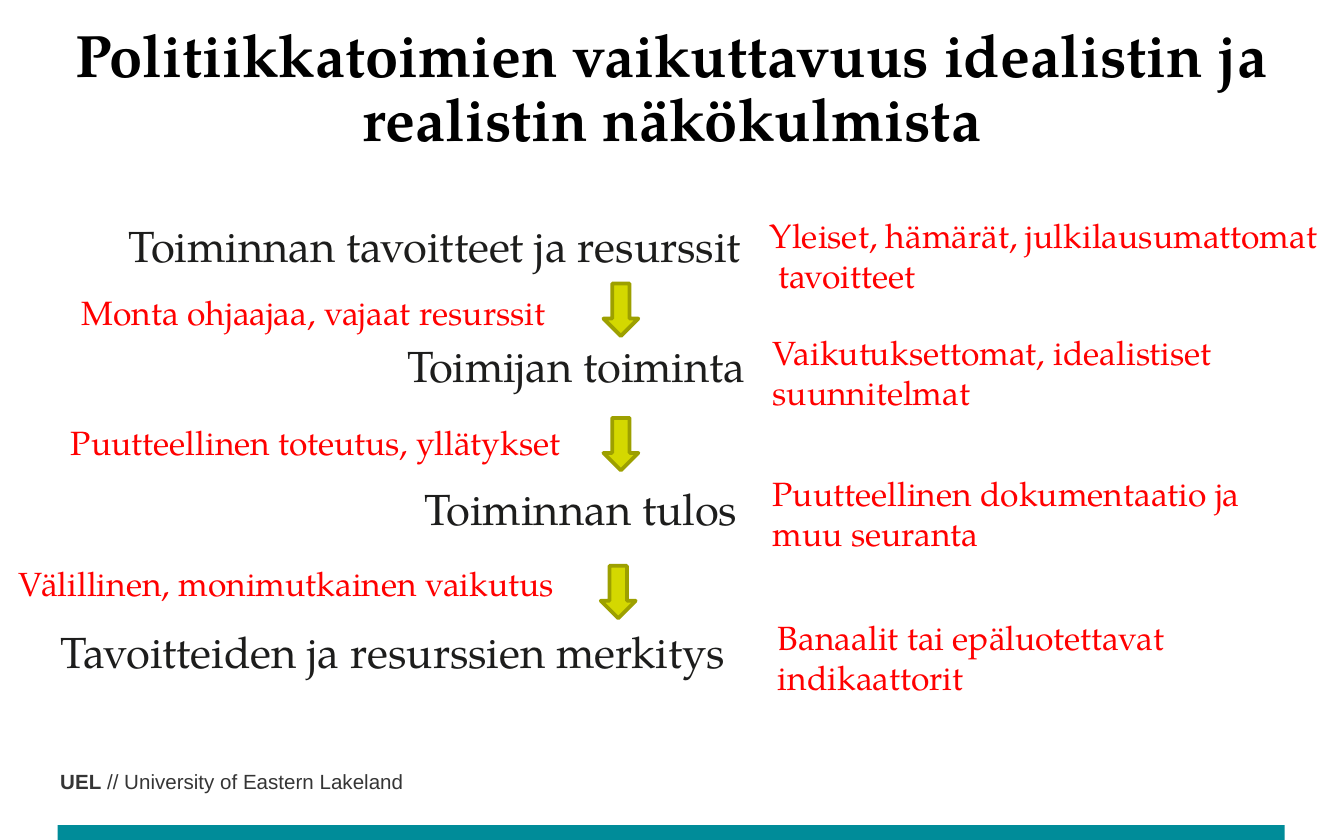
import pptx
import pptx.util
import pptx.dml.color
import pptx.enum.shapes
import pptx.enum.text
from dataclasses import dataclass

Inches = pptx.util.Inches
Pt = pptx.util.Pt


@dataclass(frozen=True)
class Theme:
    serif: str = "TeX Gyre Pagella"
    sans: str = "Arial"
    black: str = "000000"
    ink: str = "1D1D1C"
    grey: str = "353535"
    red: str = "FF0000"
    teal: str = "008C99"
    lime: str = "D4D800"
    olive: str = "9DA000"
    title_size: float = 32
    step_size: float = 23.3
    remark_size: float = 18
    footer_size: float = 11


theme = Theme()


def add_run(p, text, font, size, color, bold=False):
    r = p.add_run()
    r.text = text
    r.font.name = font
    r.font.size = Pt(size)
    r.font.bold = bold
    r.font.color.rgb = pptx.dml.color.RGBColor.from_string(color)


def add_text(left, top, width, height, lines, size, color):
    """Add an unwrapped text box with one paragraph per line."""
    sp = s.shapes.add_textbox(Inches(left), Inches(top), Inches(width), Inches(height))
    tf = sp.text_frame
    tf.word_wrap = False
    for i, line in enumerate(lines):
        p = tf.add_paragraph() if i else tf.paragraphs[0]
        add_run(p, line, theme.serif, size, color)


prs = pptx.Presentation()
prs.slide_width = Inches(10)
prs.slide_height = Inches(6.25)
s = prs.slides.add_slide(prs.slide_layouts[5])

# Footer
sp = s.shapes.add_textbox(Inches(0.35), Inches(5.67), Inches(3.86), Inches(0.29))
sp.text_frame.word_wrap = True
p = sp.text_frame.paragraphs[0]
add_run(p, "UEL", theme.sans, theme.footer_size, theme.grey, bold=True)
add_run(p, " // University of Eastern Lakeland", theme.sans, theme.footer_size, theme.grey)

bar = s.shapes.add_shape(pptx.enum.shapes.MSO_SHAPE.RECTANGLE,
                         Inches(0.43), Inches(6.14), Inches(9.13), Inches(0.11))
bar.shadow.inherit = False
bar.fill.solid()
bar.fill.fore_color.rgb = pptx.dml.color.RGBColor.from_string(theme.teal)
bar.line.fill.background()

# Title
title = s.shapes.title
title.left, title.top = Inches(0), Inches(0.14)
title.width, title.height = Inches(10), Inches(1.07)
tf = title.text_frame
tf.auto_size = pptx.enum.text.MSO_AUTO_SIZE.NONE
tf.vertical_anchor = pptx.enum.text.MSO_ANCHOR.TOP
p = tf.paragraphs[0]
p.alignment = pptx.enum.text.PP_ALIGN.CENTER
p.line_spacing = 0.9
add_run(p, "Politiikkatoimien vaikuttavuus idealistin ja realistin näkökulmista",
        theme.serif, theme.title_size, theme.black, bold=True)

# The idealist's chain of steps
steps = [
    (0.86, 1.58, 4.85, "Toiminnan tavoitteet ja resurssit"),
    (2.93, 2.47, 2.78, "Toimijan toiminta"),
    (3.06, 3.54, 2.57, "Toiminnan tulos"),
    (0.35, 4.6, 5.24, "Tavoitteiden ja resurssien merkitys"),
]
for left, top, width, text in steps:
    add_text(left, top, width, 0.49, [text], theme.step_size, theme.ink)

for left, top in [(4.49, 2.11), (4.49, 3.11), (4.47, 4.21)]:
    arrow = s.shapes.add_shape(pptx.enum.shapes.MSO_SHAPE.DOWN_ARROW,
                               Inches(left), Inches(top), Inches(0.26), Inches(0.39))
    arrow.shadow.inherit = False
    arrow.fill.solid()
    arrow.fill.fore_color.rgb = pptx.dml.color.RGBColor.from_string(theme.lime)
    arrow.line.color.rgb = pptx.dml.color.RGBColor.from_string(theme.olive)
    arrow.line.width = Pt(2)

# The realist's remarks: between the steps, then beside them
remarks = [
    (0.51, 2.12, 3.7, ["Monta ohjaajaa, vajaat resurssit"]),
    (0.43, 3.09, 3.9, ["Puutteellinen toteutus, yllätykset"]),
    (0.04, 4.14, 4.25, ["Välillinen, monimutkainen vaikutus"]),
    (5.63, 1.55, 4.33, ["Yleiset, hämärät, julkilausumattomat", " tavoitteet"]),
    (5.65, 2.42, 3.58, ["Vaikutuksettomat, idealistiset", "suunnitelmat"]),
    (5.65, 3.47, 3.72, ["Puutteellinen dokumentaatio ja", "muu seuranta"]),
    (5.69, 4.54, 3.19, ["Banaalit tai epäluotettavat", "indikaattorit"]),
]
for left, top, width, lines in remarks:
    height = 0.4 if len(lines) == 1 else 0.71
    add_text(left, top, width, height, lines, theme.remark_size, theme.red)

prs.save("out.pptx")
